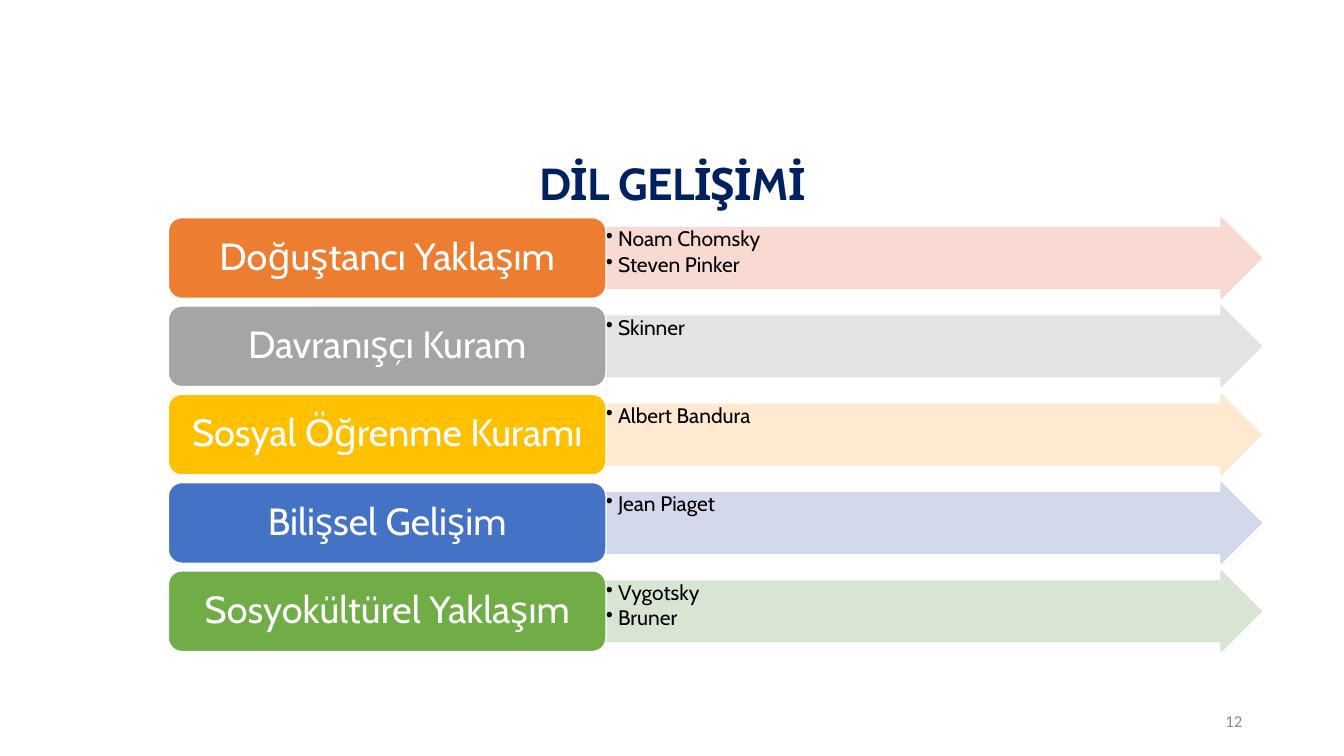
from dataclasses import dataclass

from lxml.etree import SubElement
from pptx import Presentation
from pptx.dml.color import RGBColor
from pptx.enum.shapes import MSO_SHAPE as Kind
from pptx.enum.text import MSO_ANCHOR as Anchor, PP_ALIGN as Align
from pptx.oxml.ns import qn
from pptx.util import Inches, Pt


@dataclass
class Theory:
    name: str
    people: list[str]
    fill: str
    tint: str


THEORIES = [
    Theory("Doğuştancı Yaklaşım", ["Noam Chomsky", "Steven Pinker"], "ED7D31", "F8D7CE"),
    Theory("Davranışçı Kuram", ["Skinner"], "A5A5A5", "E1E1E1"),
    Theory("Sosyal Öğrenme Kuramı", ["Albert Bandura"], "FFC000", "FFE8CC"),
    Theory("Bilişsel Gelişim", ["Jean Piaget"], "4472C4", "CFD5EA"),
    Theory("Sosyokültürel Yaklaşım", ["Vygotsky", "Bruner"], "70AD47", "D5E3CF"),
]
TOP, STEP, HEIGHT = 2.16, 0.876, 0.8


def color(code: str) -> RGBColor:
    return RGBColor.from_string(code)


def add_run(para, text: str, size: float, code: str, face: str = "Cabin"):
    run = para.add_run()
    run.text = text
    run.font.size = Pt(size)
    run.font.name = face
    run.font.color.rgb = color(code)
    return run


def set_frame(frame, anchor, side: float, edge: float) -> None:
    frame.word_wrap = True
    frame.vertical_anchor = anchor
    frame.margin_left = frame.margin_right = Inches(side)
    frame.margin_top = frame.margin_bottom = Inches(edge)


def add_box(slide, left: float, top: float, width: float, height: float):
    box = slide.shapes.add_textbox(
        Inches(left), Inches(top), Inches(width), Inches(height))
    set_frame(box.text_frame, Anchor.MIDDLE, 0.1, 0.05)
    return box.text_frame.paragraphs[0]


def add_form(slide, kind, left: float, top: float, width: float, fill: str, line: str):
    form = slide.shapes.add_shape(
        kind, Inches(left), Inches(top), Inches(width), Inches(HEIGHT))
    form.shadow.inherit = False
    form.fill.solid()
    form.fill.fore_color.rgb = color(fill)
    form.line.color.rgb = color(line)
    form.line.width = Pt(1)
    return form


def add_bullet(para) -> None:
    props = para._p.get_or_add_pPr()
    props.set("marL", str(Inches(0.12)))
    props.set("indent", str(-Inches(0.12)))
    SubElement(props, qn("a:buChar"), char="•")


def add_arrow(slide, theory: Theory, top: float) -> None:
    arrow = add_form(slide, Kind.RIGHT_ARROW, 6, top, 6.51, theory.tint, theory.tint)
    arrow.adjustments[0] = 0.75
    arrow.adjustments[1] = 0.5
    # Fill and outline are 90 % opaque
    for tone in arrow._element.spPr.iter(qn("a:srgbClr")):
        SubElement(tone, qn("a:alpha"), val="90000")
    frame = arrow.text_frame
    set_frame(frame, Anchor.TOP, 0.01, 0.01)
    for rank, person in enumerate(theory.people):
        para = frame.add_paragraph() if rank else frame.paragraphs[0]
        para.level = 1
        para.alignment = Align.LEFT
        para.line_spacing = 0.9
        para.space_after = Pt(2.25)
        add_bullet(para)
        add_run(para, person, 15, "000000")


def add_label(slide, theory: Theory, top: float) -> None:
    label = add_form(slide, Kind.ROUNDED_RECTANGLE, 1.67, top, 4.34, theory.fill, "FFFFFF")
    set_frame(label.text_frame, Anchor.MIDDLE, 0.11, 0.06)
    para = label.text_frame.paragraphs[0]
    para.alignment = Align.CENTER
    para.line_spacing = 0.9
    add_run(para, theory.name, 27, "FFFFFF")


def main() -> None:
    deck = Presentation()
    deck.slide_width, deck.slide_height = Inches(13.33), Inches(7.5)
    slide = deck.slides.add_slide(deck.slide_layouts[6])

    # Title
    title = add_box(slide, 0.92, 1.55, 11.5, 0.6)
    title.alignment = Align.CENTER
    title.line_spacing = 0.9
    run = add_run(title, "DİL GELİŞİMİ", 32, "002060")
    run.font.bold = True
    run._r.get_or_add_rPr().set("spc", "-50")

    # One row per theory
    for row, theory in enumerate(THEORIES):
        top = TOP + row * STEP
        add_arrow(slide, theory, top)
        add_label(slide, theory, top)

    # Page number
    page = add_box(slide, 9.42, 6.95, 3, 0.4)
    page.alignment = Align.RIGHT
    add_run(page, "12", 12, "8C8C8C", "Calibri")

    deck.save("out.pptx")


if __name__ == "__main__":
    main()
